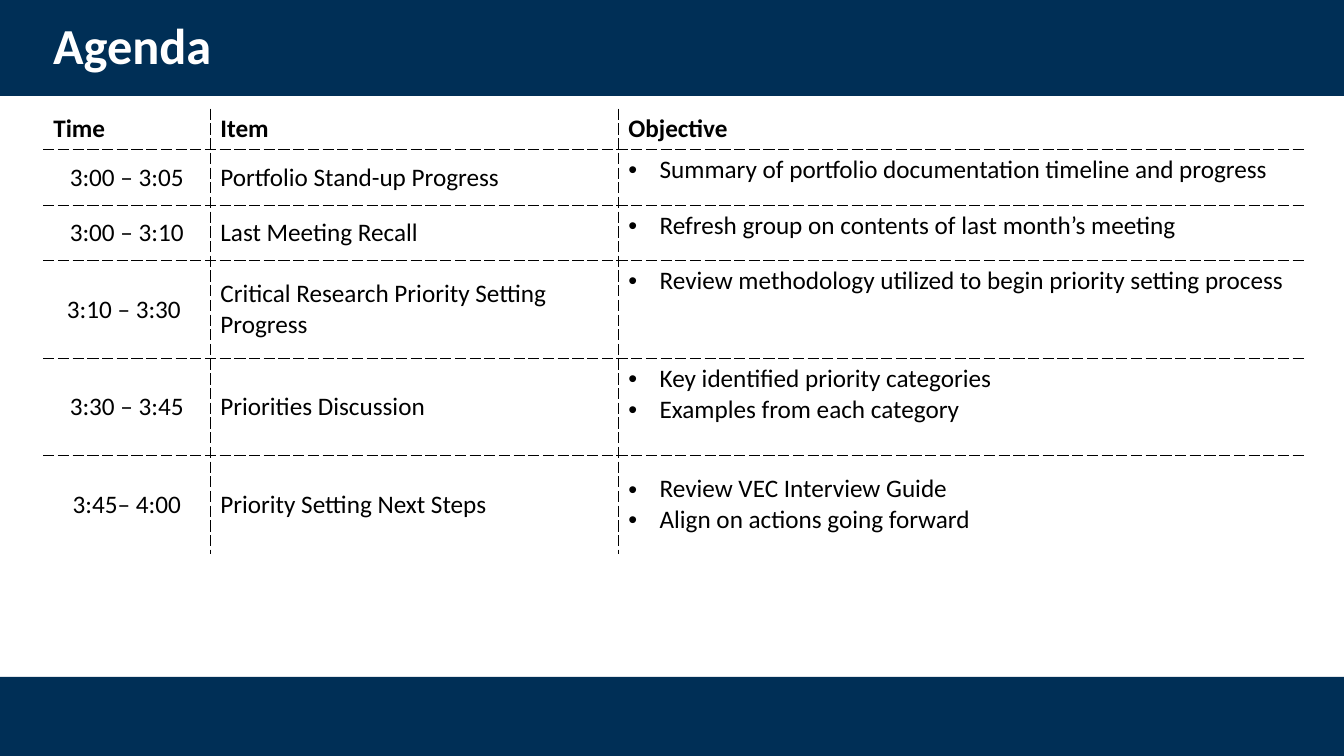
"""Build the meeting agenda slide with its schedule table."""
from lxml import etree
from pptx import Presentation
from pptx.dml.color import RGBColor
from pptx.enum.shapes import MSO_SHAPE
from pptx.enum.text import MSO_ANCHOR, PP_ALIGN
from pptx.oxml.ns import qn
from pptx.util import Cm, Pt

RECTANGLE = MSO_SHAPE.RECTANGLE
TOP, MIDDLE = MSO_ANCHOR.TOP, MSO_ANCHOR.MIDDLE
LEFT, CENTER = PP_ALIGN.LEFT, PP_ALIGN.CENTER

TITLE = "Agenda"
HEADINGS = ("Time", "Item", "Objective")
AGENDA = [
    ("3:00 – 3:05", "Portfolio Stand-up Progress",
     ["Summary of portfolio documentation timeline and progress"], TOP),
    ("3:00 – 3:10", "Last Meeting Recall",
     ["Refresh group on contents of last month’s meeting"], TOP),
    ("3:10 – 3:30 ", "Critical Research Priority Setting Progress",
     ["Review methodology utilized to begin priority setting process"], TOP),
    ("3:30 – 3:45", "Priorities Discussion",
     ["Key identified priority categories", "Examples from each category"], TOP),
    ("3:45– 4:00", "Priority Setting Next Steps",
     ["Review VEC Interview Guide", "Align on actions going forward"], MIDDLE),
]

THEME = {
    "navy": RGBColor(0x00, 0x2F, 0x56),
    "white": RGBColor(0xFF, 0xFF, 0xFF),
    "black": RGBColor(0x00, 0x00, 0x00),
    "font": "Calibri",
    "title": Pt(36),
    "body": Pt(18),
    "rule": Pt(1),
}
NO_STYLE = "{2D5ABB26-0587-4C30-8999-92F81FD0307C}"

SLIDE_WIDTH, SLIDE_HEIGHT = Cm(33.87), Cm(19.05)
BANDS = [(Cm(0), Cm(2.42)), (Cm(17.06), Cm(2.02))]
MARGIN = Cm(1.09)
TABLE_TOP = Cm(2.74)
COLUMN_WIDTHS = [Cm(4.21), Cm(10.28), Cm(17.29)]
ROW_HEIGHTS = [Cm(1.02)] + [Cm(1.4)] * 2 + [Cm(2.46)] * 3
BULLET_INDENT = Cm(0.79)


def format_font(paragraph, size, color, bold):
    values = {"name": THEME["font"], "size": size, "bold": bold}
    for key, value in values.items():
        setattr(paragraph.font, key, value)
    paragraph.font.color.rgb = color


def add_bullet(paragraph):
    properties = paragraph._p.get_or_add_pPr()
    properties.set("marL", str(BULLET_INDENT))
    properties.set("indent", str(-BULLET_INDENT))
    etree.SubElement(properties, qn("a:buFont"), typeface="Arial")
    etree.SubElement(properties, qn("a:buChar"), char="•")


def add_borders(cell, sides):
    properties = cell._tc.get_or_add_tcPr()
    for side, is_inner in sides.items():
        line = etree.SubElement(properties, qn(f"a:ln{side}"), w=str(THEME["rule"]))
        if is_inner:
            fill = etree.SubElement(line, qn("a:solidFill"))
            etree.SubElement(fill, qn("a:srgbClr"), val=str(THEME["black"]))
            etree.SubElement(line, qn("a:prstDash"), val="sysDash")
        else:
            etree.SubElement(line, qn("a:noFill"))


def fill_cell(cell, lines, anchor, align=LEFT, bold=False, bulleted=False):
    cell.vertical_anchor = anchor
    cell.text = "\n".join(lines)
    for paragraph in cell.text_frame.paragraphs:
        paragraph.alignment = align
        if bulleted:
            add_bullet(paragraph)
        format_font(paragraph, THEME["body"], THEME["black"], bold)


def add_bands(slide):
    for top, height in BANDS:
        band = slide.shapes.add_shape(RECTANGLE, 0, top, SLIDE_WIDTH, height)
        band.shadow.inherit = False
        band.fill.solid()
        band.fill.fore_color.rgb = THEME["navy"]
        band.line.fill.background()


def add_title(slide):
    frame = slide.shapes.add_textbox(MARGIN, Cm(0.28), Cm(29.21), Cm(1.88)).text_frame
    frame.word_wrap = True
    frame.vertical_anchor = MIDDLE
    heading = frame.paragraphs[0]
    heading.text = TITLE
    heading.line_spacing = 0.9
    format_font(heading, THEME["title"], THEME["white"], True)


def add_agenda(slide):
    row_count, column_count = len(ROW_HEIGHTS), len(COLUMN_WIDTHS)
    table = slide.shapes.add_table(row_count, column_count, MARGIN, TABLE_TOP,
                                   sum(COLUMN_WIDTHS), sum(ROW_HEIGHTS)).table
    table.first_row = table.horz_banding = False
    table._tbl.tblPr.find(qn("a:tableStyleId")).text = NO_STYLE
    for column, width in zip(table.columns, COLUMN_WIDTHS):
        column.width = width
    for row, height in zip(table.rows, ROW_HEIGHTS):
        row.height = height

    for cell, heading in zip(table.rows[0].cells, HEADINGS):
        fill_cell(cell, [heading], TOP, bold=True)
    for row, (time, item, objectives, anchor) in enumerate(AGENDA, 1):
        fill_cell(table.cell(row, 0), [time], MIDDLE, align=CENTER)
        fill_cell(table.cell(row, 1), [item], MIDDLE)
        fill_cell(table.cell(row, 2), objectives, anchor, bulleted=True)

    for row in range(row_count):
        for column in range(column_count):
            cell = table.cell(row, column)
            add_borders(cell, {"L": column > 0, "R": column < column_count - 1,
                               "T": row > 0, "B": row < row_count - 1})
            if row == row_count - 1:
                cell.fill.solid()
                cell.fill.fore_color.rgb = THEME["white"]
            else:
                cell.fill.background()


def main():
    deck = Presentation()
    deck.slide_width, deck.slide_height = SLIDE_WIDTH, SLIDE_HEIGHT
    slide = deck.slides.add_slide(deck.slide_layouts[6])
    add_bands(slide)
    add_agenda(slide)
    add_title(slide)
    deck.save("out.pptx")


if __name__ == "__main__":
    main()
